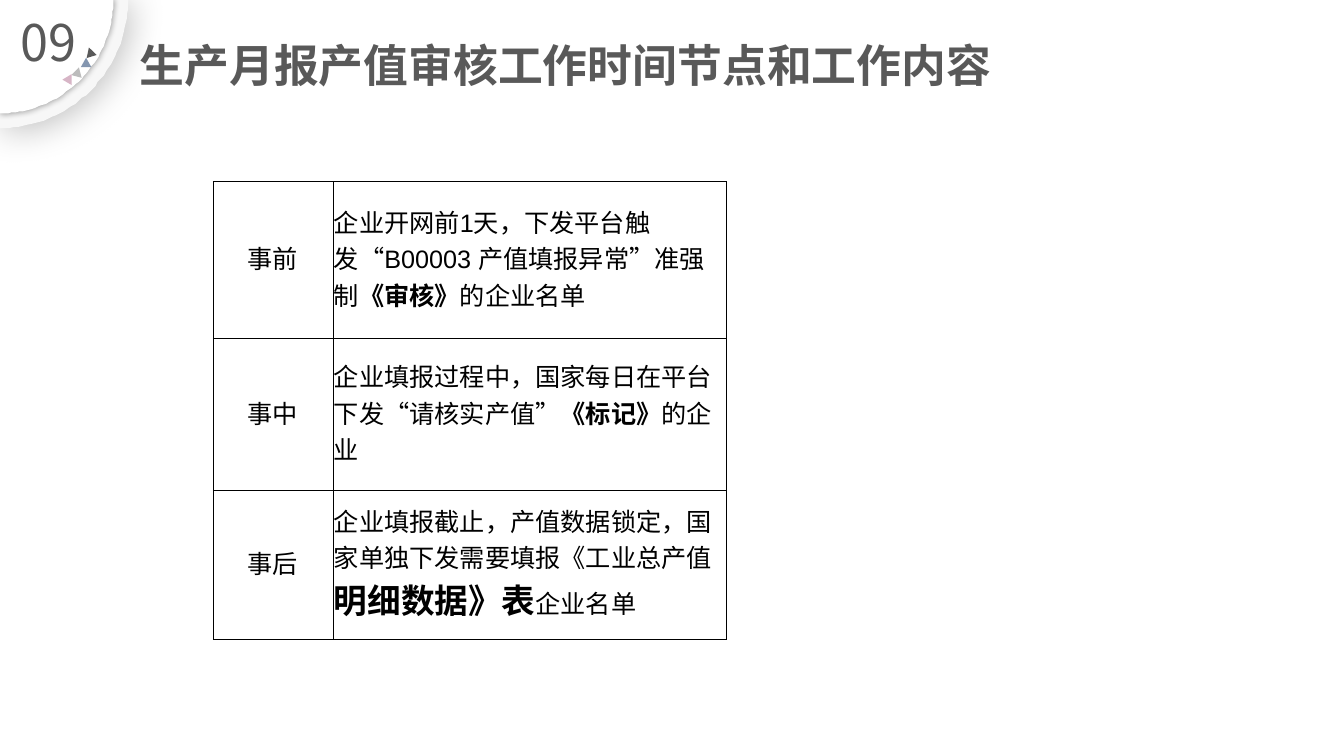
import math

import pptx
import pptx.dml.color
import pptx.enum.shapes
import pptx.enum.text
import pptx.oxml
import pptx.oxml.ns
import pptx.util

RGBColor = pptx.dml.color.RGBColor
MSO_SHAPE = pptx.enum.shapes.MSO_SHAPE
MSO_ANCHOR = pptx.enum.text.MSO_ANCHOR
PP_ALIGN = pptx.enum.text.PP_ALIGN

PX = 9525
CJK = "Noto Sans CJK SC"
LATIN = "Arial"
BLACK = RGBColor(0x00, 0x00, 0x00)
WHITE = RGBColor(0xFF, 0xFF, 0xFF)
RIM = RGBColor(0xF7, 0xF7, 0xF7)
DARK = RGBColor(0x59, 0x59, 0x59)
BLUE = RGBColor(0x84, 0x96, 0xB0)
GREY = RGBColor(0xBC, 0xBC, 0xBC)
PINK = RGBColor(0xD7, 0xB5, 0xC6)

STAGES = [
    ("事前", [("企业开网前1天，下发平台触发“B00003 产值填报异常”准强制", 18, False),
            ("《审核》", 18, True), ("的企业名单", 18, False)]),
    ("事中", [("企业填报过程中，国家每日在平台下发“请核实产值”", 18, False),
            ("《标记》", 18, True), ("的企业", 18, False)]),
    ("事后", [("企业填报截止，产值数据锁定，国家单独下发需要填报《工业总产值", 18, False),
            ("明细数据》表", 24, True), ("企业名单", 18, False)]),
]


def px(*lengths):
    """Turn pixel lengths into EMU."""
    return [pptx.util.Emu(round(n * PX)) for n in lengths]


def style_run(r, size, color, font, bold=False):
    """Set the size, colour, weight and fonts of a run."""
    r.font.size = pptx.util.Pt(size)
    r.font.color.rgb = color
    r.font.bold = bold
    r.font.name = font
    ea = pptx.oxml.parse_xml(
        f'<a:ea {pptx.oxml.ns.nsdecls("a")} typeface="{CJK}"/>')
    r.font._element.find(pptx.oxml.ns.qn("a:latin")).addnext(ea)


def set_margins(frame, left, top, right, bottom):
    """Set the four insets of a text frame or a cell."""
    (frame.margin_left, frame.margin_top,
     frame.margin_right, frame.margin_bottom) = px(left, top, right, bottom)


def paint(sp, color):
    """Give a shape a plain fill without line or shadow."""
    sp.shadow.inherit = False
    sp.fill.solid()
    sp.fill.fore_color.rgb = color
    sp.line.fill.background()


def add_quarter(slide, x, y, radius, color, blur, distance, alpha):
    """Draw a shadowed quarter disc around a corner."""
    arc = [(x + radius * math.cos(math.radians(a)),
            y + radius * math.sin(math.radians(a))) for a in range(0, 91, 2)]
    builder = slide.shapes.build_freeform(x, y, scale=PX)
    builder.add_line_segments(arc, close=True)
    sp = builder.convert_to_shape()
    paint(sp, color)
    effects = sp._element.spPr.find(pptx.oxml.ns.qn("a:effectLst"))
    effects.append(pptx.oxml.parse_xml(
        f'<a:outerShdw {pptx.oxml.ns.nsdecls("a")} blurRad="{blur * 12700}" '
        f'dist="{distance * 12700}" dir="2700000" algn="tl" rotWithShape="0">'
        f'<a:srgbClr val="000000"><a:alpha val="{alpha * 1000}"/></a:srgbClr>'
        f'</a:outerShdw>'))


def add_badge(slide, x, y, radius):
    """Draw the corner badge with its triangles."""
    add_quarter(slide, x, y, radius, RIM, 26, 3, 25)
    add_quarter(slide, x, y, radius - 14, WHITE, 5, 0, 40)
    triangles = [(86, 49, -17, DARK), (82, 59, 0, BLUE),
                 (74, 68, 15, GREY), (66, 74, 30, PINK)]
    for cx, cy, angle, color in triangles:
        sp = slide.shapes.add_shape(MSO_SHAPE.ISOSCELES_TRIANGLE,
                                    *px(x + cx - 5, y + cy - 4, 10, 9))
        sp.rotation = angle
        paint(sp, color)


def add_number(slide, x, y, w, h, text):
    """Write the section number in the badge."""
    tf = slide.shapes.add_textbox(*px(x, y, w, h)).text_frame
    tf.word_wrap = True
    tf.text = text
    p = tf.paragraphs[0]
    p.alignment = PP_ALIGN.CENTER
    style_run(p.runs[0], 36, DARK, CJK)


def add_title(slide, x, y, w, h, text):
    """Fill and place the title placeholder."""
    sp = slide.shapes.title
    sp.left, sp.top, sp.width, sp.height = px(x, y, w, h)
    tf = sp.text_frame
    tf.text = text
    tf.word_wrap = True
    tf.auto_size = pptx.enum.text.MSO_AUTO_SIZE.NONE
    tf.vertical_anchor = MSO_ANCHOR.MIDDLE
    set_margins(tf, 0, 0, 0, 0)
    p = tf.paragraphs[0]
    p.alignment = PP_ALIGN.LEFT
    p.line_spacing = 1.2
    style_run(p.runs[0], 32, DARK, CJK, True)


def fill_cell(cell, pieces, alignment):
    """Write styled pieces into a bordered cell without fill."""
    set_margins(cell, 1, 1, 1, 5)
    cell.vertical_anchor = MSO_ANCHOR.MIDDLE
    p = cell.text_frame.paragraphs[0]
    p.alignment = alignment
    for text, size, bold in pieces:
        r = p.add_run()
        r.text = text
        style_run(r, size, BLACK, LATIN, bold)
    for side in ("lnL", "lnR", "lnT", "lnB"):
        cell._tc.get_or_add_tcPr().append(pptx.oxml.parse_xml(
            f'<a:{side} {pptx.oxml.ns.nsdecls("a")} w="6350"><a:solidFill>'
            f'<a:srgbClr val="{BLACK}"/></a:solidFill></a:{side}>'))
    cell.fill.background()


def add_stage_table(slide, x, y, widths, heights):
    """Build the table of review stages."""
    table = slide.shapes.add_table(
        len(heights), len(widths),
        *px(x, y, sum(widths), sum(heights))).table
    table.first_row = False
    table.horz_banding = False
    for column, width in zip(table.columns, px(*widths)):
        column.width = width
    for row, height, (stage, pieces) in zip(table.rows, px(*heights), STAGES):
        row.height = height
        fill_cell(row.cells[0], [(stage, 18, False)], PP_ALIGN.CENTER)
        fill_cell(row.cells[1], pieces, PP_ALIGN.LEFT)


def main():
    """Build and save the slide."""
    prs = pptx.Presentation()
    prs.slide_width, prs.slide_height = px(1280, 720)
    slide = prs.slides.add_slide(prs.slide_layouts[5])
    add_badge(slide, 0, 0, 122)
    add_title(slide, 133, 29, 1026, 55, "生产月报产值审核工作时间节点和工作内容")
    add_stage_table(slide, 203, 173, [114, 375], [149, 145, 142])
    add_number(slide, 4, 6, 84, 68, "09")
    prs.save("out.pptx")


if __name__ == "__main__":
    main()
